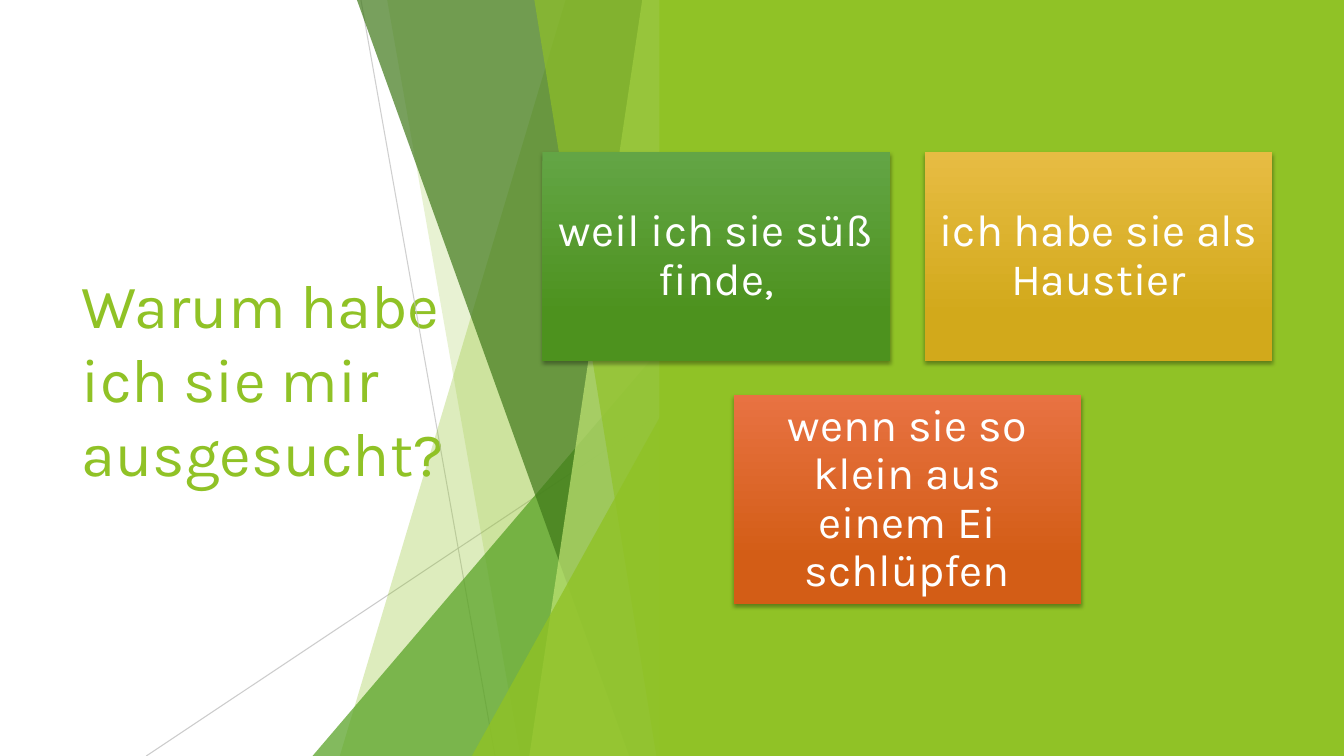
from lxml.etree import SubElement
from pptx import Presentation
from pptx.dml.color import RGBColor
from pptx.enum.shapes import MSO_CONNECTOR, MSO_SHAPE
from pptx.enum.text import MSO_ANCHOR, MSO_AUTO_SIZE, PP_ALIGN
from pptx.oxml.ns import qn
from pptx.util import Inches, Pt

# Content
FONT = "Karla"
GREEN, WHITE = "90C226", "FFFFFF"
QUESTION = "Warum habe ich sie mir ausgesucht?"
REASON_ROWS = [  # text, gradient top, gradient bottom
    [("weil ich sie süß finde,", "63A545", "4D921E"),
     ("ich habe sie als Haustier", "E7BC43", "D2A91B")],
    [("wenn sie so klein aus einem Ei schlüpfen", "E87242", "D35D16")],
]
RAYS = [  # start, end, colour, opacity %
    ((3.58, 0), (4.91, 7.5), "BFBFBF", 75),
    ((6.66, 4.03), (1.45, 7.5), "BFBFBF", 80),
]
FACETS = [  # kind, then top x and bottom x (wedge) or left and top (triangle)
    ("wedge", 5.61, 3.37, GREEN, 30),
    ("wedge", 3.84, 5.16, GREEN, 20),
    ("triangle", 3.1, 3.33, "54A021", 72),
    ("wedge", 3.54, 6.24, "3F7819", 70),
    ("wedge", 6.37, 5.25, "C0E474", 70),
    ("wedge", 5.3, 6.51, GREEN, 65),
    ("triangle", 4.68, 3.93, GREEN, 80),
]

# Grid
WIDTH, HEIGHT = 13.33, 7.5
FACET_RIGHT, PANEL_LEFT = 6.66, 6.54
BOX_W, BOX_H, GAP = 3.45, 2.07, 0.34
GRID_CENTER, GRID_TOP = 9.0, 1.51

deck = Presentation()
deck.slide_width, deck.slide_height = Inches(WIDTH), Inches(HEIGHT)
slide = deck.slides.add_slide(deck.slide_layouts[5])
shapes = slide.shapes


def rgb(color):
    return RGBColor.from_string(color)


def set_opacity(owner, percent):
    for color in owner.iter(qn("a:srgbClr")):
        SubElement(color, qn("a:alpha"), val=str(percent * 1000))


def paint(shape, color, opacity=100):
    shape.shadow.inherit = False
    shape.line.fill.background()
    shape.fill.solid()
    shape.fill.fore_color.rgb = rgb(color)
    if opacity < 100:
        set_opacity(shape.fill._xPr, opacity)


def write(frame, text, size, color, align):
    frame.text = text
    frame.word_wrap = True
    frame.auto_size = MSO_AUTO_SIZE.NONE
    frame.vertical_anchor = MSO_ANCHOR.MIDDLE
    paragraph = frame.paragraphs[0]
    paragraph.alignment = align
    font = paragraph.runs[0].font
    font.name, font.size, font.color.rgb = FONT, Pt(size), rgb(color)
    return paragraph


# Title
title = shapes.title
title.left, title.top = Inches(0.71), Inches(GRID_TOP)
title.width, title.height = Inches(3.88), Inches(4.48)
write(title.text_frame, QUESTION, 44, GREEN, PP_ALIGN.LEFT)

# Thin rays
for start, end, color, opacity in RAYS:
    ray = shapes.add_connector(MSO_CONNECTOR.STRAIGHT,
                               *(Inches(v) for v in start + end))
    ray.line.width = Pt(0.75)
    ray.line.color.rgb = rgb(color)
    properties = ray._element.spPr
    set_opacity(properties, opacity)
    SubElement(properties, qn("a:effectLst"))

# Translucent facets
for kind, first, second, color, opacity in FACETS:
    if kind == "wedge":
        outline = shapes.build_freeform(Inches(first), 0, scale=1.0)
        corners = [(FACET_RIGHT, 0), (FACET_RIGHT, HEIGHT), (second, HEIGHT)]
        outline.add_line_segments([(Inches(x), Inches(y)) for x, y in corners])
        facet = outline.convert_to_shape()
    else:
        facet = shapes.add_shape(
            MSO_SHAPE.ISOSCELES_TRIANGLE, Inches(first), Inches(second),
            Inches(FACET_RIGHT - first), Inches(HEIGHT - second))
        facet.adjustments[0] = 1
    paint(facet, color, opacity)

# Green panel
panel = shapes.add_shape(MSO_SHAPE.RECTANGLE, Inches(PANEL_LEFT), 0,
                         Inches(WIDTH - PANEL_LEFT), Inches(HEIGHT))
paint(panel, GREEN)

# Reason boxes, each row centred on the grid
for row, reasons in enumerate(REASON_ROWS):
    row_width = len(reasons) * (BOX_W + GAP) - GAP
    for column, (reason, light, dark) in enumerate(reasons):
        left = GRID_CENTER - row_width / 2 + column * (BOX_W + GAP)
        top = GRID_TOP + row * (BOX_H + GAP)
        box = shapes.add_shape(MSO_SHAPE.RECTANGLE, Inches(left), Inches(top),
                               Inches(BOX_W), Inches(BOX_H))
        box.line.fill.background()
        box.fill.gradient()
        box.fill.gradient_angle = 270
        for stop, color, position in zip(box.fill.gradient_stops,
                                         (light, dark), (0, 0.78)):
            stop.color.rgb, stop.position = rgb(color), position

        # Soft shadow below the box
        box.shadow.inherit = False
        effects = box._element.spPr.find(qn("a:effectLst"))
        shadow = SubElement(effects, qn("a:outerShdw"), blurRad=str(Pt(3)),
                            dist=str(Pt(2)), dir="5400000", rotWithShape="0")
        SubElement(shadow, qn("a:srgbClr"), val="000000")
        set_opacity(shadow, 35)

        frame = box.text_frame
        frame.margin_left = frame.margin_right = Inches(0.13)
        frame.margin_top = frame.margin_bottom = Inches(0.13)
        paragraph = write(frame, reason, 32, WHITE, PP_ALIGN.CENTER)
        paragraph.line_spacing = 0.9

deck.save("out.pptx")
